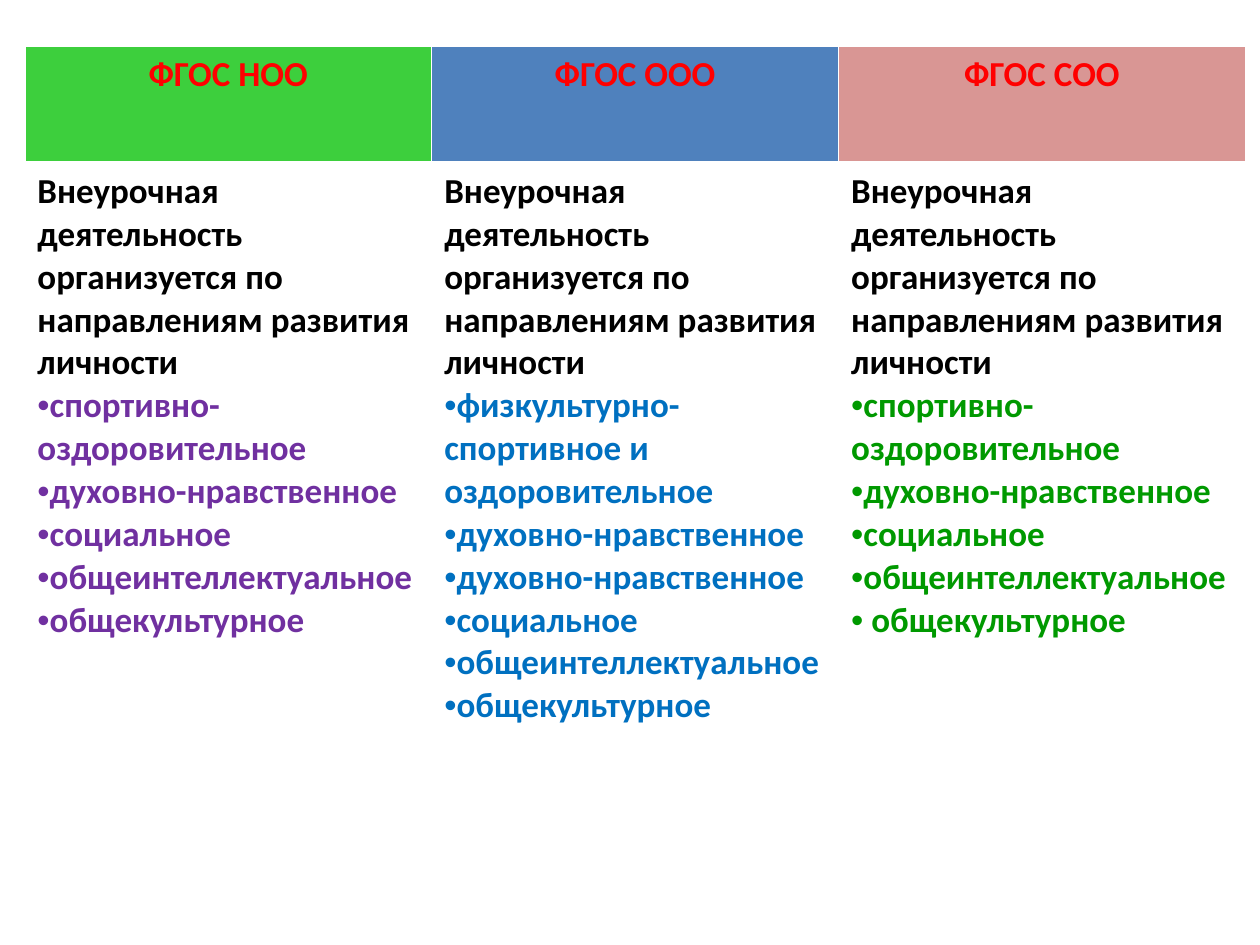
import dataclasses

import lxml.etree
import pptx
import pptx.dml.color
import pptx.enum.text
import pptx.oxml.ns
import pptx.util

Pt = pptx.util.Pt
qn = pptx.oxml.ns.qn


@dataclasses.dataclass(frozen=True)
class Theme:
    font: str = "Calibri"
    bullet_font: str = "Arial"
    size: int = 20
    heading: str = "FF0000"
    text: str = "000000"
    white: str = "FFFFFF"
    line: int = 1
    heavy_line: int = 3


INTRO = "Внеурочная деятельность организуется по направлениям развития личности"
SPORT = "спортивно-оздоровительное"
MORAL = "духовно-нравственное"
SOCIAL = "социальное"
INTELLECT = "общеинтеллектуальное"
CULTURE = "общекультурное"

# Heading, heading fill, list colour, list items
STANDARDS = [
    ("ФГОС НОО", "3DCF3D", "7030A0",
     [SPORT, MORAL, SOCIAL, INTELLECT, CULTURE]),
    ("ФГОС ООО", "4F81BD", "0070C0",
     ["физкультурно-спортивное и оздоровительное",
      MORAL, MORAL, SOCIAL, INTELLECT, CULTURE]),
    ("ФГОС СОО", "D99694", "009900",
     [SPORT, MORAL, SOCIAL, INTELLECT, " " + CULTURE]),
]


class SlideBuilder:
    def __init__(self, slide, theme):
        self.s = slide
        self.theme = theme

    def table(self, left, top, col_width, row_heights, columns):
        shape = self.s.shapes.add_table(
            len(row_heights), columns, Pt(left), Pt(top),
            Pt(col_width * columns), Pt(sum(row_heights)))
        for col in shape.table.columns:
            col.width = Pt(col_width)
        for row, height in zip(shape.table.rows, row_heights):
            row.height = Pt(height)
        return shape.table

    def cell(self, cell, fill, top_line, bottom_line):
        cell.fill.solid()
        cell.fill.fore_color.rgb = pptx.dml.color.RGBColor.from_string(fill)
        tcPr = cell.fill._xPr
        widths = {"a:lnL": self.theme.line, "a:lnR": self.theme.line,
                  "a:lnT": top_line, "a:lnB": bottom_line}
        # Borders come before the fill in the cell properties
        for i, (tag, width) in enumerate(widths.items()):
            ln = lxml.etree.Element(qn(tag), w=str(Pt(width)))
            solid = lxml.etree.SubElement(ln, qn("a:solidFill"))
            lxml.etree.SubElement(solid, qn("a:srgbClr"), val=self.theme.white)
            tcPr.insert(i, ln)

    def paragraph(self, p, text, color, align=None, bullet=False):
        p.text = text
        p.alignment = align
        p.font.name = self.theme.font
        p.font.size = Pt(self.theme.size)
        p.font.bold = True
        p.font.color.rgb = pptx.dml.color.RGBColor.from_string(color)
        # Runs in a table take their look from the run itself
        for r in p.runs:
            r.font.name = self.theme.font
            r.font.size = Pt(self.theme.size)
            r.font.bold = True
            r.font.color.rgb = pptx.dml.color.RGBColor.from_string(color)
        if bullet:
            pPr = p._p.get_or_add_pPr()
            char = lxml.etree.Element(qn("a:buChar"), char="•")
            font = lxml.etree.Element(
                qn("a:buFont"), typeface=self.theme.bullet_font)
            pPr.insert(0, char)
            pPr.insert(0, font)


def main():
    theme = Theme()
    prs = pptx.Presentation()
    prs.slide_width, prs.slide_height = Pt(720), Pt(540)
    b = SlideBuilder(prs.slides.add_slide(prs.slide_layouts[6]), theme)

    # Comparison table, one column per standard
    table = b.table(14.2, 26.6, 232.5, [67, 426], len(STANDARDS))
    for col, (name, fill, color, items) in enumerate(STANDARDS):
        # Heading
        head = table.cell(0, col)
        b.cell(head, fill, theme.line, theme.heavy_line)
        b.paragraph(head.text_frame.paragraphs[0], name, theme.heading,
                    align=pptx.enum.text.PP_ALIGN.CENTER)

        # Introduction and bulleted directions
        body = table.cell(1, col)
        b.cell(body, theme.white, theme.heavy_line, theme.line)
        tf = body.text_frame
        b.paragraph(tf.paragraphs[0], INTRO, theme.text)
        for item in items:
            b.paragraph(tf.add_paragraph(), item, color, bullet=True)

    prs.save("out.pptx")


if __name__ == "__main__":
    main()
